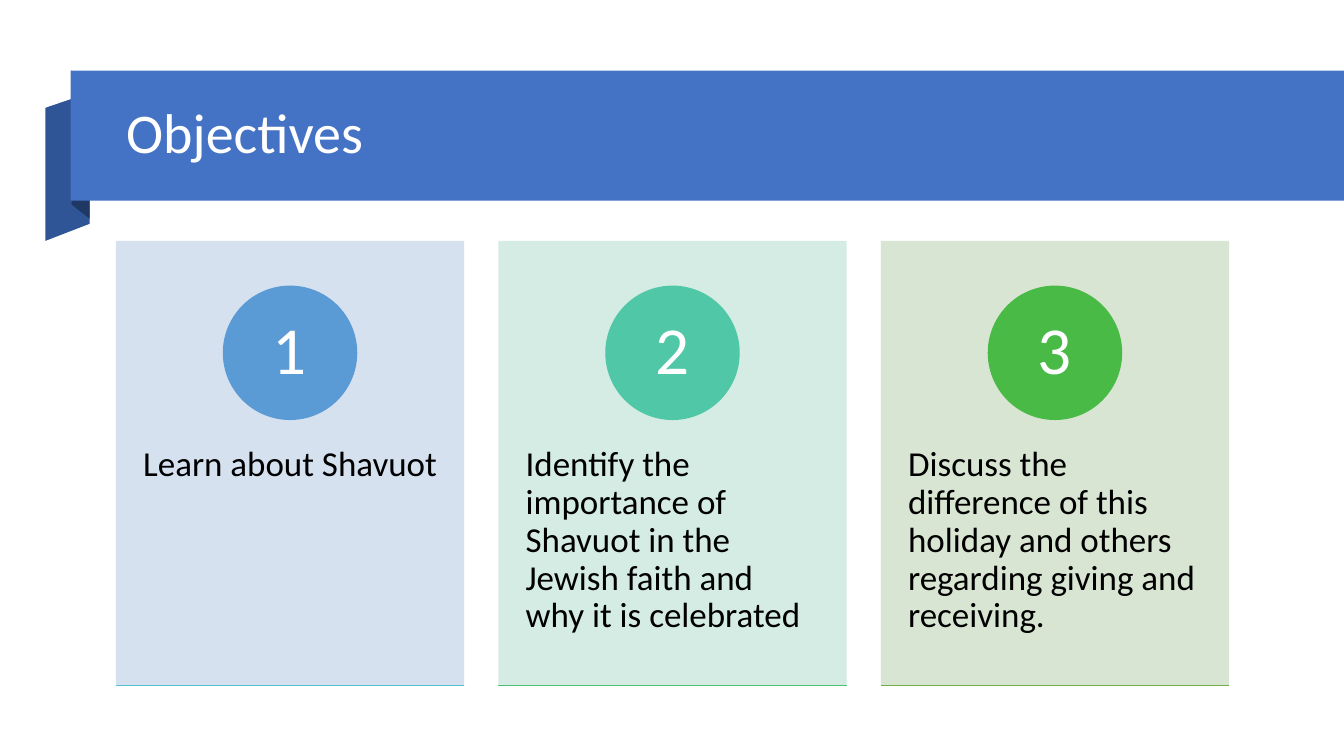
from lxml import etree
from pptx import Presentation
from pptx.dml.color import RGBColor
from pptx.enum import shapes, text
from pptx.oxml.ns import qn
from pptx.util import Inches, Pt

FONT = "Calibri"
WHITE = RGBColor(0xFF, 0xFF, 0xFF)
BLACK = RGBColor(0x00, 0x00, 0x00)
BANNER = RGBColor(0x44, 0x72, 0xC4)
RIBBON = RGBColor(0x2F, 0x55, 0x97)
FOLD = RGBColor(0x20, 0x38, 0x64)

# Wording, card colour, badge colour, base line colour
OBJECTIVES = [
    ("Learn about Shavuot",
     RGBColor(0xD2, 0xDE, 0xEF), RGBColor(0x5B, 0x9B, 0xD5), RGBColor(0x55, 0xC3, 0xCF)),
    ("Identify the importance of Shavuot in the Jewish faith and why it is celebrated",
     RGBColor(0xD0, 0xEA, 0xE1), RGBColor(0x50, 0xC8, 0xA7), RGBColor(0x4B, 0xC1, 0x74)),
    ("Discuss the difference of this holiday and others regarding giving and receiving.",
     RGBColor(0xD5, 0xE3, 0xCF), RGBColor(0x4A, 0xBA, 0x46), RGBColor(0x70, 0xAD, 0x47)),
]


def paint(shape, color):
    shape.shadow.inherit = False
    shape.fill.solid()
    shape.fill.fore_color.rgb = color
    shape.line.fill.background()


def add_panel(page, kind, box, color):
    panel = page.shapes.add_shape(kind, *map(Inches, box))
    paint(panel, color)
    return panel


def add_outline(page, points, color):
    corners = [(Inches(x), Inches(y)) for x, y in points]
    builder = page.shapes.build_freeform(*corners[0], scale=1.0)
    builder.add_line_segments(corners[1:], close=True)
    paint(builder.convert_to_shape(), color)


def write(shape, wording, size, color, align, anchor, insets):
    """Fill a shape with one paragraph; insets are (horizontal, vertical) inches."""
    frame = shape.text_frame
    frame.text = wording
    frame.word_wrap = True
    frame.auto_size = text.MSO_AUTO_SIZE.NONE
    frame.vertical_anchor = anchor
    frame.margin_left = frame.margin_right = Inches(insets[0])
    frame.margin_top = frame.margin_bottom = Inches(insets[1])
    para = frame.paragraphs[0]
    para.alignment = align
    para.line_spacing = 0.9
    para.font.name = FONT
    para.font.size = Pt(size)
    para.font.color.rgb = color


def set_opacity(shape, percent):
    for color in shape.fill._xPr.iter(qn("a:srgbClr")):
        etree.SubElement(color, qn("a:alpha"), val=str(percent * 1000))


def add_banner(page, left, top, width, height):
    fold_right = left + 0.19
    add_outline(page, [(fold_right, top + 1.52), (left - 0.25, top + 1.69),
                       (left - 0.25, top + 0.37), (fold_right, top + 0.22)], RIBBON)
    add_outline(page, [(fold_right, top + 1.47), (left + 0.01, top + 1.33),
                       (left + 0.01, top), (fold_right, top + 0.15)], FOLD)
    add_panel(page, shapes.MSO_SHAPE.RECTANGLE, (left, top, width, height), BANNER)

    title = page.shapes.title
    title.left, title.top = Inches(left + 0.45), Inches(top + 0.16)
    title.width, title.height = Inches(11.27), Inches(0.96)
    write(title, "Objectives", 40, WHITE, text.PP_ALIGN.LEFT,
          text.MSO_ANCHOR.MIDDLE, (0.1, 0.05))
    # Draw the title in front of the banner
    page.shapes._spTree.append(title._element)


def add_card(page, left, top, width, height, number, objective):
    wording, card_color, badge_color, base_color = objective
    card = add_panel(page, shapes.MSO_SHAPE.RECTANGLE, (left, top, width, height), card_color)
    set_opacity(card, 90)

    body = page.shapes.add_textbox(Inches(left), Inches(top + 1.68), Inches(width), Inches(2.65))
    write(body, wording, 25, BLACK, text.PP_ALIGN.LEFT, text.MSO_ANCHOR.TOP, (0.27, 0.36))

    diameter = 1.32
    badge = add_panel(page, shapes.MSO_SHAPE.OVAL,
                      (left + (width - diameter) / 2, top + 0.45, diameter, diameter), badge_color)
    badge.line.color.rgb = badge_color
    badge.line.width = Pt(1)
    write(badge, str(number), 48, WHITE, text.PP_ALIGN.CENTER,
          text.MSO_ANCHOR.MIDDLE, (0.1, 0.01))

    bottom = Inches(top + height)
    base = page.shapes.add_connector(shapes.MSO_CONNECTOR.STRAIGHT, Inches(left), bottom,
                                     Inches(left + width), bottom)
    base.line.color.rgb = base_color
    base.line.width = Pt(1)
    etree.SubElement(base._element.spPr, qn("a:effectLst"))


def add_cards(page, left, top, width, height, gap=0.34):
    count = len(OBJECTIVES)
    card_width = (width - gap * (count - 1)) / count
    for index, objective in enumerate(OBJECTIVES):
        add_card(page, left + index * (card_width + gap), top, card_width, height,
                 index + 1, objective)


def main():
    deck = Presentation()
    deck.slide_width, deck.slide_height = Inches(13.33), Inches(7.5)
    page = deck.slides.add_slide(deck.slide_layouts[5])
    add_banner(page, 0.7, 0.7, 12.63, 1.29)
    add_cards(page, 1.15, 2.39, 11.04, 4.41)
    deck.save("out.pptx")


if __name__ == "__main__":
    main()
